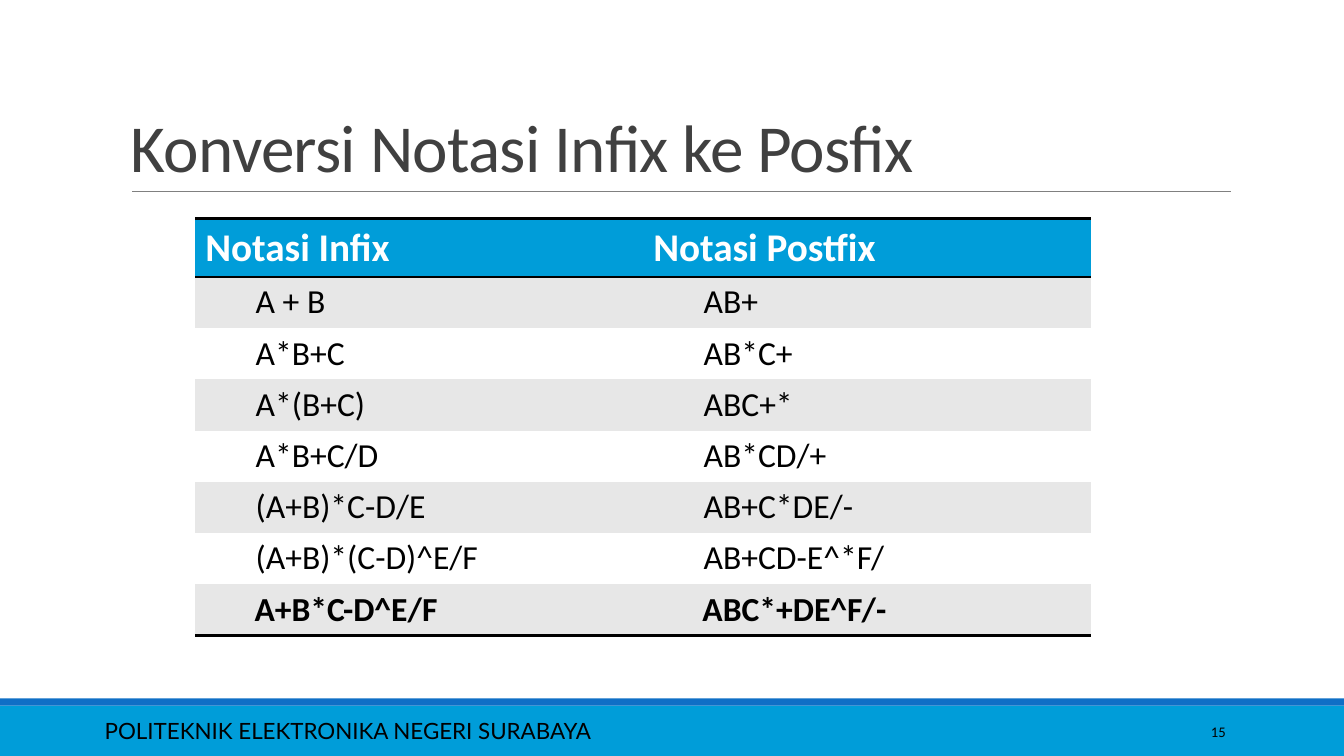
from lxml.etree import SubElement
from pptx import Presentation
from pptx.dml.color import RGBColor
from pptx.enum.shapes import MSO_CONNECTOR, MSO_SHAPE
from pptx.enum.text import MSO_ANCHOR, PP_ALIGN
from pptx.oxml.ns import qn
from pptx.util import Cm, Pt

WIDTH, HEIGHT = 33.87, 19.05
BLACK, WHITE, GREY, CYAN, BLUE = "000000", "FFFFFF", "E7E7E7", "009DD9", "0F6FC6"
PLAIN_TABLE = "{2D5ABB26-0587-4C30-8999-92F81FD0307C}"  # no style, no grid

HEADINGS = ("Notasi Infix", "Notasi Postfix")
CONVERSIONS = [
    ("A + B", "AB+"),
    ("A*B+C", "AB*C+"),
    ("A*(B+C)", "ABC+*"),
    ("A*B+C/D", "AB*CD/+"),
    ("(A+B)*C-D/E", "AB+C*DE/-"),
    ("(A+B)*(C-D)^E/F", "AB+CD-E^*F/"),
    ("A+B*C-D^E/F", "ABC*+DE^F/-"),
]


def color(hex_string):
    return RGBColor.from_string(hex_string)


class SlideBuilder:
    font = "Calibri"

    def __init__(self, slide):
        self.slide = slide
        self.shapes = slide.shapes

    def style(self, paragraph, size, ink, bold=False, font=None):
        for run in paragraph.runs:
            run.font.name = font or self.font
            run.font.size = Pt(size)
            run.font.bold = bold
            run.font.color.rgb = color(ink)

    def bar(self, top, height, fill):
        bar = self.shapes.add_shape(
            MSO_SHAPE.RECTANGLE, 0, Cm(top), Cm(WIDTH), Cm(height))
        bar.shadow.inherit = False
        bar.fill.solid()
        bar.fill.fore_color.rgb = color(fill)
        bar.line.fill.background()

    def rule(self, left, right, y, ink, weight):
        rule = self.shapes.add_connector(
            MSO_CONNECTOR.STRAIGHT, Cm(left), Cm(y), Cm(right), Cm(y))
        rule.line.color.rgb = color(ink)
        rule.line.width = Pt(weight)
        SubElement(rule._element.spPr, qn("a:effectLst"))

    def text(self, words, left, top, width, height, size, ink=BLACK,
             anchor=MSO_ANCHOR.MIDDLE, align=PP_ALIGN.LEFT, font=None):
        box = self.shapes.add_textbox(Cm(left), Cm(top), Cm(width), Cm(height))
        frame = box.text_frame
        frame.word_wrap = True
        frame.vertical_anchor = anchor
        frame.text = words
        paragraph = frame.paragraphs[0]
        paragraph.alignment = align
        self.style(paragraph, size, ink, font=font)
        return paragraph

    def cell(self, cell, words, fill, size, ink, bold, indent):
        cell.text = words
        cell.fill.solid()
        cell.fill.fore_color.rgb = color(fill)
        paragraph = cell.text_frame.paragraphs[0]
        paragraph._p.get_or_add_pPr().set("marL", str(Cm(indent)))
        self.style(paragraph, size, ink, bold)

    def border(self, cell, side, weight=2):
        properties = cell._tc.get_or_add_tcPr()
        line = SubElement(properties, qn(f"a:{side}"), w=str(Pt(weight)))
        SubElement(SubElement(line, qn("a:solidFill")), qn("a:srgbClr"), val=BLACK)
        # Borders must precede the cell fill
        properties.insert(properties.index(properties.find(qn("a:solidFill"))), line)

    def table(self, headings, rows, left, top, column, header_height, row_height):
        total = header_height + row_height * len(rows)
        table = self.shapes.add_table(
            len(rows) + 1, len(headings), Cm(left), Cm(top),
            Cm(column * len(headings)), Cm(total)).table
        table._tbl.tblPr.find(qn("a:tableStyleId")).text = PLAIN_TABLE
        table.horz_banding = False
        for table_column in table.columns:
            table_column.width = Cm(column)
        for table_row in table.rows:
            table_row.height = Cm(row_height)
        table.rows[0].height = Cm(header_height)

        last = len(rows)
        for c, heading in enumerate(headings):
            self.cell(table.cell(0, c), heading, CYAN, 28, WHITE, True, 0)
            self.border(table.cell(0, c), "lnT")
            self.border(table.cell(0, c), "lnB")
            for r, row in enumerate(rows, 1):
                self.cell(table.cell(r, c), row[c], GREY if r % 2 else WHITE, 24,
                          BLACK, r == last, 1.24 if r == last else 1.27)
            self.border(table.cell(last, c), "lnB")


def main():
    presentation = Presentation()
    presentation.slide_width, presentation.slide_height = Cm(WIDTH), Cm(HEIGHT)
    builder = SlideBuilder(presentation.slides.add_slide(presentation.slide_layouts[6]))

    # Footer bars and title rule
    builder.bar(17.78, 1.27, CYAN)
    builder.bar(17.6, 0.18, BLUE)
    builder.rule(3.33, 31.01, 4.83, "808080", 0.5)

    # Footer text
    builder.text("POLITEKNIK ELEKTRONIKA NEGERI SURABAYA",
                 2.39, 17.91, 21.36, 1.02, 16, font="Lato")
    builder.text("15", 27.51, 17.93, 3.63, 1.02, 10.5, align=PP_ALIGN.RIGHT)

    # Title
    title = builder.text("Konversi Notasi Infix ke Posfix", 3.05, 0.79, 27.94, 4.04,
                         48, "404040", MSO_ANCHOR.BOTTOM)
    title.line_spacing = 0.85
    title.runs[0].font._element.set("spc", "-50")

    # Infix and postfix table
    builder.table(HEADINGS, CONVERSIONS, 4.92, 5.51, 11.29, 1.47, 1.29)

    presentation.save("out.pptx")


if __name__ == "__main__":
    main()
